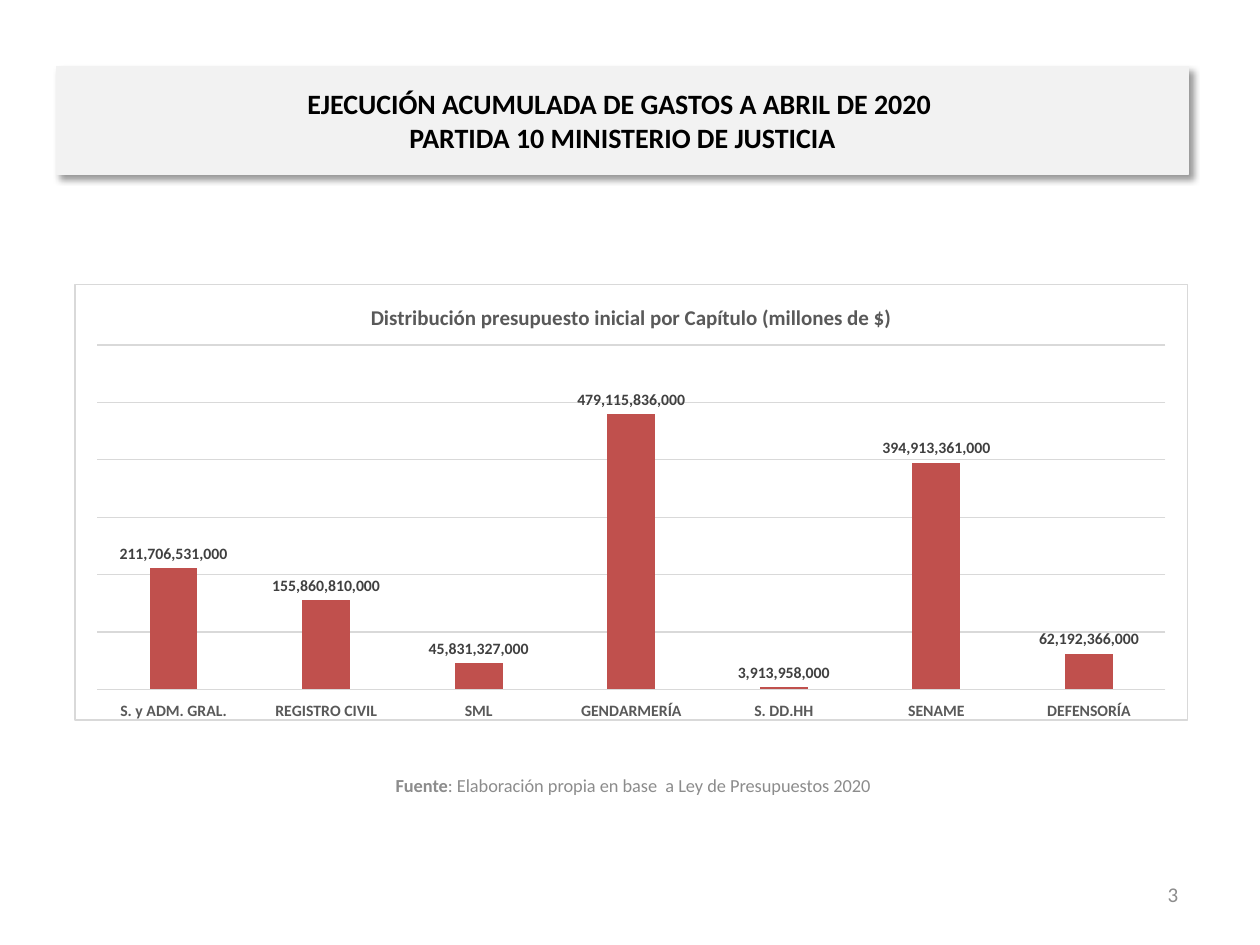
from dataclasses import dataclass

from lxml.etree import fromstring
from pptx import Presentation
from pptx.chart.data import CategoryChartData as Data
from pptx.dml.color import RGBColor
from pptx.enum.chart import XL_CHART_TYPE as Kind, XL_LABEL_POSITION as Pos
from pptx.enum.chart import XL_TICK_LABEL_POSITION as Side, XL_TICK_MARK as Tick
from pptx.enum.shapes import MSO_SHAPE as Form
from pptx.enum.text import MSO_ANCHOR as Anchor, PP_ALIGN as Align
from pptx.oxml.ns import nsdecls
from pptx.util import Pt

GREY, DARK, RULE, PALE = "8C8C8C", "595959", "D9D9D9", "F2F2F2"


@dataclass
class Box:
    x: float
    y: float
    w: float
    h: float

    def place(self) -> tuple:
        return Pt(self.x), Pt(self.y), Pt(self.w), Pt(self.h)


@dataclass
class Note:
    box: Box
    words: list  # (text, bold); "\n" is a line break
    size: float
    hue: str = GREY
    align: Align = Align.CENTER


def tint(hue: str) -> RGBColor:
    return RGBColor.from_string(hue)


def put(obj, form: dict) -> None:
    for key, val in form.items():
        setattr(obj, key, val)


def style(font, size: float, hue: str, bold: bool) -> None:
    put(font, {"name": "Calibri", "size": Pt(size), "bold": bold})
    font.color.rgb = tint(hue)


def stroke(line, hue: str) -> None:
    line.color.rgb = tint(hue)
    line.width = Pt(0.75)


def write(shape, note: Note) -> None:
    frame = shape.text_frame
    put(frame, {"word_wrap": True, "vertical_anchor": Anchor.MIDDLE})
    para = frame.paragraphs[0]
    para.alignment = note.align
    for text, bold in note.words:
        if text == "\n":
            para.add_line_break()
            continue
        run = para.add_run()
        run.text = text
        style(run.font, note.size, note.hue, bold)


def banner(slide, note: Note) -> None:
    shape = slide.shapes.add_shape(Form.RECTANGLE, *note.box.place())
    shape.shadow.inherit = False
    shape.fill.solid()
    shape.fill.fore_color.rgb = tint(PALE)
    stroke(shape.line, PALE)
    write(shape, note)
    # Soft shadow to the lower right
    cast = fromstring(
        f'<a:outerShdw {nsdecls("a")} blurRad="{Pt(4)}" dist="{Pt(3)}" '
        'dir="2700000" algn="tl" rotWithShape="0"><a:srgbClr val="000000">'
        '<a:alpha val="40000"/></a:srgbClr></a:outerShdw>')
    shape._element.spPr.find("{*}effectLst").append(cast)


def graph(slide, box: Box, title: str, rows: dict) -> None:
    data = Data(number_format="#,##0")
    data.categories = list(rows)
    data.add_series("Presupuesto inicial", list(rows.values()))
    chart = slide.shapes.add_chart(
        Kind.COLUMN_CLUSTERED, *box.place(), data).chart
    style(chart.font, 10, "000000", False)
    put(chart, {"has_legend": False, "has_title": True})

    # Title
    head = chart.chart_title
    head.include_in_layout = False
    head.text_frame.text = title
    style(head.text_frame.paragraphs[0].runs[0].font, 12, DARK, True)

    # Axes
    cat, val = chart.category_axis, chart.value_axis
    put(cat, {"major_tick_mark": Tick.NONE, "minor_tick_mark": Tick.NONE,
              "tick_label_position": Side.LOW})
    style(cat.tick_labels.font, 9, DARK, True)
    stroke(cat.format.line, RULE)
    put(val, {"minimum_scale": 0, "maximum_scale": 600e9, "major_unit": 100e9,
              "has_major_gridlines": True, "visible": False})
    stroke(val.major_gridlines.format.line, RULE)

    # Columns and labels
    plot = chart.plots[0]
    put(plot, {"gap_width": 219, "overlap": -27, "vary_by_categories": False,
               "has_data_labels": True})
    bars = plot.series[0]
    bars.invert_if_negative = False
    bars.format.fill.solid()
    bars.format.fill.fore_color.rgb = tint("C0504D")
    tags = plot.data_labels
    put(tags, {"show_value": True, "number_format": "#,##0",
               "number_format_is_linked": False, "position": Pos.OUTSIDE_END})
    style(tags.font, 9, "404040", True)

    # Plot position, then background and border
    area = chart._chartSpace.chart.plotArea
    for old in area.findall("{*}layout"):
        area.remove(old)
    spots = {"x": 0.02, "y": 0.14, "w": 0.96, "h": 0.79}
    modes = "".join(f'<c:{k}Mode val="edge"/>' for k in "xy")
    sizes = "".join(f'<c:{k} val="{v}"/>' for k, v in spots.items())
    area.insert(0, fromstring(
        f'<c:layout {nsdecls("c")}><c:manualLayout><c:layoutTarget val="inner"/>'
        f'{modes}{sizes}</c:manualLayout></c:layout>'))
    chart._chartSpace.chart.addnext(fromstring(
        f'<c:spPr {nsdecls("c", "a")}><a:solidFill><a:srgbClr val="FFFFFF"/>'
        f'</a:solidFill><a:ln w="{Pt(0.75)}"><a:solidFill>'
        f'<a:srgbClr val="{RULE}"/></a:solidFill></a:ln></c:spPr>'))


HEAD = Note(Box(32.4, 38.2, 646.6, 61.2),
            [("EJECUCIÓN ACUMULADA DE GASTOS A ABRIL DE 2020 ", True),
             ("\n", True), ("PARTIDA 10 MINISTERIO DE JUSTICIA", True)],
            16, "000000")
NOTES = [
    Note(Box(512.6, 496.8, 167.8, 28.8), [("3", False)], 12, align=Align.RIGHT),
    Note(Box(31, 434.2, 661.7, 28.8),
         [("Fuente", True),
          (": Elaboración propia en base  a Ley de Presupuestos 2020", False)],
         10.5),
]
ROWS = {
    "S. y ADM. GRAL.": 211706531000,
    "REGISTRO CIVIL": 155860810000,
    "SML": 45831327000,
    "GENDARMERÍA": 479115836000,
    "S. DD.HH": 3913958000,
    "SENAME": 394913361000,
    "DEFENSORÍA": 62192366000,
}


def main() -> None:
    deck = Presentation()
    put(deck, {"slide_width": Pt(720), "slide_height": Pt(540)})
    slide = deck.slides.add_slide(deck.slide_layouts[6])
    banner(slide, HEAD)
    for note in NOTES:
        write(slide.shapes.add_textbox(*note.box.place()), note)
    graph(slide, Box(42.5, 162, 636.5, 249.8),
          "Distribución presupuesto inicial por Capítulo (millones de $)", ROWS)
    deck.save("out.pptx")


if __name__ == "__main__":
    main()
